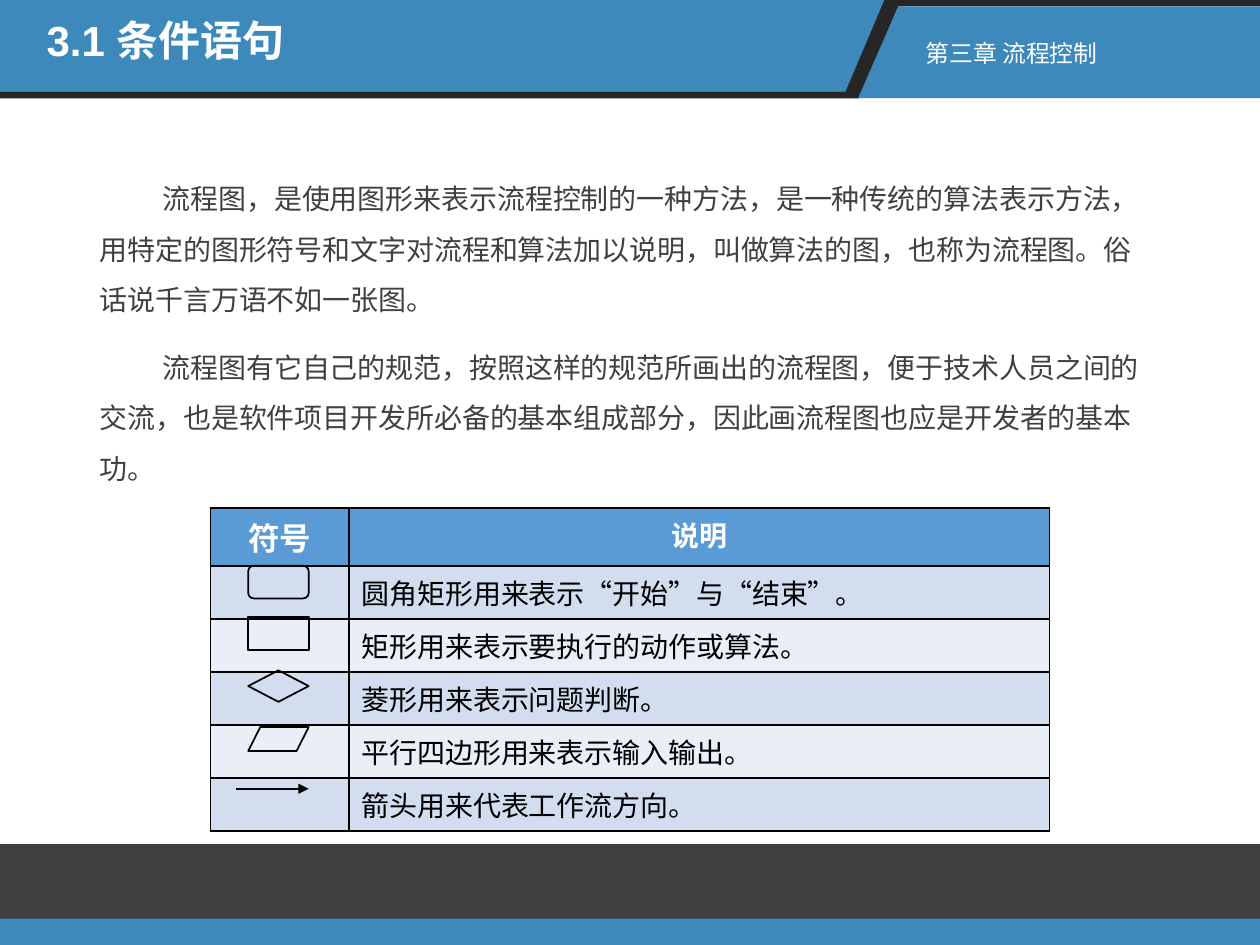
from lxml import etree
from pptx import Presentation
from pptx import util as u
from pptx.dml.color import RGBColor
from pptx.enum import shapes, text
from pptx.oxml import ns

Inches, Pt = u.Inches, u.Pt
BLUE, DARK, GREY = "3D89BC", "262626", "404040"
WHITE, BLACK = "FFFFFF", "000000"
HEAD, ODD, EVEN = "5B9BD5", "D2DEEF", "EAEFF7"
KIND = shapes.MSO_SHAPE


def rgb(code):
    return RGBColor.from_string(code)


def sub(node, tag, **attrs):
    return etree.SubElement(node, ns.qn(tag), **attrs)


class Deck:
    """Hold the style and current slide, and draw each kind of element."""

    font = "Arial"

    def __init__(self, wide, high):
        self.prs = Presentation()
        self.prs.slide_width, self.prs.slide_height = Inches(wide), Inches(high)
        self.slide = self.prs.slides.add_slide(self.prs.slide_layouts[1])
        self.shapes = self.slide.shapes

    def style(self, para, size, color, bold=False, align=text.PP_ALIGN.LEFT):
        para.alignment = align
        for run in para.runs:
            font = run.font
            font.name, font.size, font.bold = self.font, Pt(size), bold
            font.color.rgb = rgb(color)

    def paint(self, shape, fill=None, line=None):
        shape.shadow.inherit = False
        if fill:
            shape.fill.solid()
            shape.fill.fore_color.rgb = rgb(fill)
        else:
            shape.fill.background()
        if line:
            shape.line.color.rgb = rgb(line)
            shape.line.width = Pt(1)
        else:
            shape.line.fill.background()

    def outline(self, points, fill):
        start, *rest = [(Inches(x), Inches(y)) for x, y in points]
        build = self.shapes.build_freeform(*start)
        build.add_line_segments(rest)
        self.paint(build.convert_to_shape(), fill)

    def shape(self, kind, box, fill=None, line=None):
        self.paint(self.shapes.add_shape(kind, *map(Inches, box)), fill, line)

    def arrow(self, start, end):
        line = self.shapes.add_connector(
            shapes.MSO_CONNECTOR.STRAIGHT, *map(Inches, start + end))
        line.line.color.rgb = rgb(BLACK)
        line.line.width = Pt(1)
        sub(line.line._get_or_add_ln(), "a:tailEnd", type="triangle")
        sub(line.element.spPr, "a:effectLst")

    def place(self, holder, box):
        holder.left, holder.top, holder.width, holder.height = map(Inches, box)
        frame = holder.text_frame
        frame.word_wrap = True
        frame.auto_size = text.MSO_AUTO_SIZE.NONE
        frame.vertical_anchor = text.MSO_ANCHOR.TOP
        self.shapes.element.append(holder.element)
        return frame

    def title(self, words, box):
        frame = self.place(self.shapes.title, box)
        frame.text = words
        para = frame.paragraphs[0]
        para.line_spacing, para.space_before = 0.9, Pt(10)
        self.style(para, 24, WHITE, True)

    def body(self, lines, box):
        frame = self.place(self.slide.placeholders[1], box)
        frame.text = "\n".join(lines)
        for para in frame.paragraphs:
            para.line_spacing, para.space_before = 1.5, Pt(10)
            self.style(para, 16, GREY)
            props = para._p.get_or_add_pPr()
            props.set("marL", "0")
            props.set("indent", str(Inches(0.5)))
            sub(props, "a:buNone")

    def label(self, words, box, size):
        frame = self.shapes.add_textbox(*map(Inches, box)).text_frame
        frame.word_wrap = False
        frame.auto_size = text.MSO_AUTO_SIZE.SHAPE_TO_FIT_TEXT
        frame.text = words
        self.style(frame.paragraphs[0], size, WHITE)

    def cell(self, cell, words, fill, **look):
        cell.text = words
        self.style(cell.text_frame.paragraphs[0], **look)
        props = cell._tc.get_or_add_tcPr()
        for side in ("a:lnL", "a:lnR", "a:lnT", "a:lnB"):
            edge = sub(props, side, w=str(Pt(1)))
            sub(sub(edge, "a:solidFill"), "a:srgbClr", val=BLACK)
        cell.fill.solid()
        cell.fill.fore_color.rgb = rgb(fill)

    def table(self, heads, notes, box, cols):
        grid = self.shapes.add_table(
            len(notes) + 1, len(cols), *map(Inches, box)).table
        for col, wide in zip(grid.columns, cols):
            col.width = Inches(wide)
        for col, (words, size) in enumerate(heads):
            self.cell(grid.cell(0, col), words, HEAD, size=size, color=WHITE,
                      bold=True, align=text.PP_ALIGN.CENTER)
        for row, note in enumerate(notes, 1):
            for col, words in enumerate(("", note)):
                self.cell(grid.cell(row, col), words, ODD if row % 2 else EVEN,
                          size=16, color=BLACK)


def main():
    deck = Deck(10, 7.5)
    deck.outline([(0, 0), (7.05, 0), (6.74, 0.73), (0, 0.73)], BLUE)
    deck.outline([(7.02, 0), (10, 0), (10, 0.05), (7.13, 0.05), (6.82, 0.78),
                  (0, 0.78), (0, 0.73), (6.71, 0.73)], DARK)
    deck.outline([(7.13, 0.05), (10, 0.05), (10, 0.78), (6.81, 0.78)], BLUE)
    deck.shape(KIND.RECTANGLE, (0, 6.7, 10, 0.6), GREY)
    deck.shape(KIND.RECTANGLE, (0, 7.29, 10, 0.21), BLUE)
    deck.body([
        "流程图，是使用图形来表示流程控制的一种方法，是一种传统的算法表示方法，"
        "用特定的图形符号和文字对流程和算法加以说明，叫做算法的图，也称为流程图。"
        "俗话说千言万语不如一张图。",
        "流程图有它自己的规范，按照这样的规范所画出的流程图，便于技术人员之间的"
        "交流，也是软件项目开发所必备的基本组成部分，因此画流程图也应是开发者的基本功。",
    ], (0.69, 1.26, 8.62, 4.42))
    deck.table([("符号", 18), ("说明", 16)], [
        "圆角矩形用来表示“开始”与“结束”。",
        "矩形用来表示要执行的动作或算法。",
        "菱形用来表示问题判断。",
        "平行四边形用来表示输入输出。",
        "箭头用来代表工作流方向。",
    ], (1.67, 4.03, 6.67, 2.43), (1.1, 5.56))
    for kind, top, high in [
        (KIND.ROUNDED_RECTANGLE, 4.49, 0.26),
        (KIND.RECTANGLE, 4.9, 0.26),
        (KIND.FLOWCHART_DECISION, 5.32, 0.25),
        (KIND.FLOWCHART_DATA, 5.77, 0.19),
    ]:
        deck.shape(kind, (1.97, top, 0.48, high), line=BLACK)
    deck.arrow((1.87, 6.26), (2.45, 6.26))
    deck.label("第三章 流程控制", (7.25, 0.26, 1.57, 0.33), 13.6)
    deck.title("3.1 条件语句", (0.27, 0.11, 4.08, 0.62))
    deck.prs.save("out.pptx")


if __name__ == "__main__":
    main()
